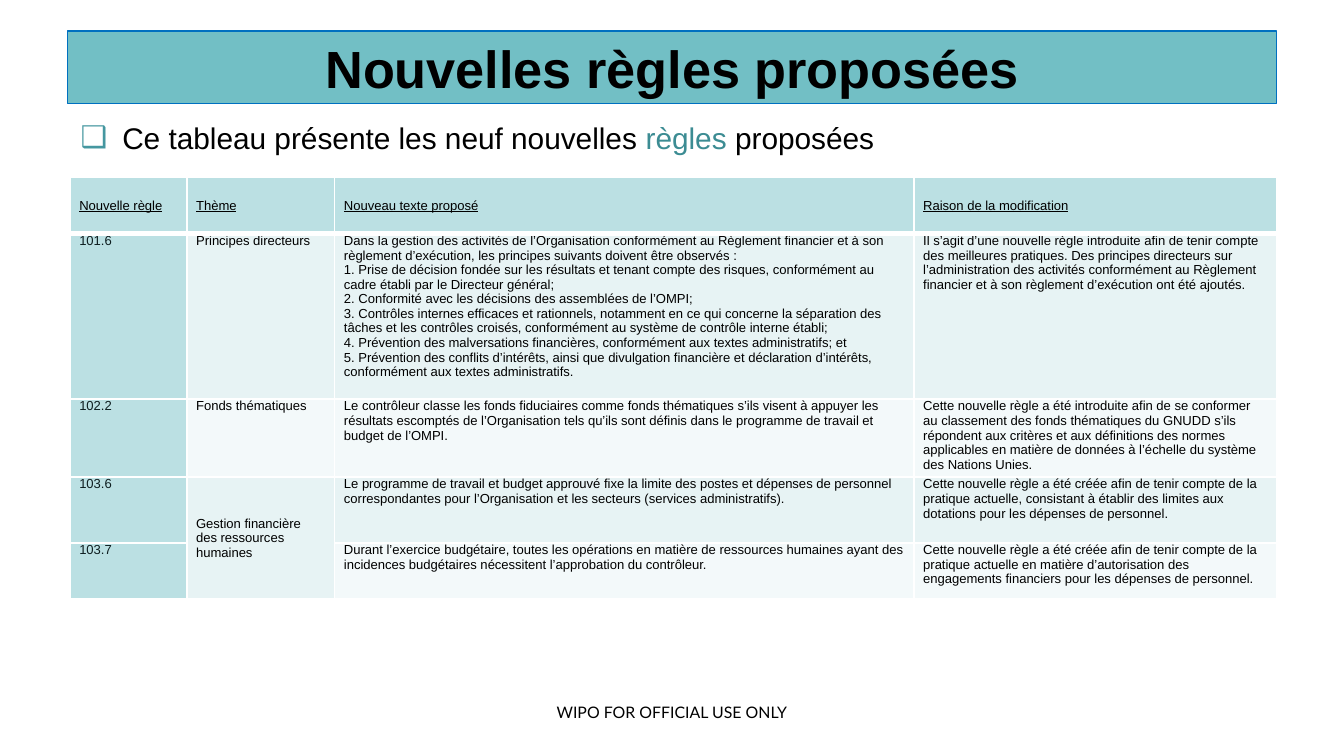
import pptx
import pptx.dml.color
import pptx.enum.text
import pptx.oxml
import pptx.oxml.ns
import pptx.util

Inches = pptx.util.Inches
Pt = pptx.util.Pt
Align = pptx.enum.text.PP_ALIGN
Anchor = pptx.enum.text.MSO_ANCHOR
AutoSize = pptx.enum.text.MSO_AUTO_SIZE

THEME = {
    "font": "Arial", "footer_font": "Lato",
    "title_size": 28, "lead_size": 16, "table_size": 7, "footer_size": 8.5,
    "text": "000000", "rule_text": "0E1E20", "accent": "3C8C93", "bullet": "4597A0",
    "title_fill": "72BFC5", "title_line": "0070C0",
    "head_fill": "BBE0E3", "bands": ("E7F3F4", "F3F9FA"), "border": "FFFFFF",
}

TITLE = "Nouvelles règles proposées"
LEAD = [
    ("Ce tableau présente les neuf nouvelles ", "text"),
    ("règles", "accent"),
    (" proposées", "text"),
]
FOOTER = "WIPO FOR OFFICIAL USE ONLY"
HEADINGS = ["Nouvelle règle", "Thème", "Nouveau texte proposé", "Raison de la modification"]
RULES = [
    ("101.6", "Principes directeurs", [
        "Dans la gestion des activités de l’Organisation conformément au Règlement financier et à son règlement d’exécution, les principes suivants doivent être observés :",
        "1. Prise de décision fondée sur les résultats et tenant compte des risques, conformément au cadre établi par le Directeur général;",
        "2. Conformité avec les décisions des assemblées de l’OMPI;",
        "3. Contrôles internes efficaces et rationnels, notamment en ce qui concerne la séparation des tâches et les contrôles croisés, conformément au système de contrôle interne établi;",
        "4. Prévention des malversations financières, conformément aux textes administratifs; et",
        "5. Prévention des conflits d’intérêts, ainsi que divulgation financière et déclaration d’intérêts, conformément aux textes administratifs.",
    ], "Il s’agit d’une nouvelle règle introduite afin de tenir compte des meilleures pratiques. Des principes directeurs sur l’administration des activités conformément au Règlement financier et à son règlement d’exécution ont été ajoutés."),
    ("102.2", "Fonds thématiques",
     "Le contrôleur classe les fonds fiduciaires comme fonds thématiques s’ils visent à appuyer les résultats escomptés de l’Organisation tels qu’ils sont définis dans le programme de travail et budget de l’OMPI.",
     "Cette nouvelle règle a été introduite afin de se conformer au classement des fonds thématiques du GNUDD s’ils répondent aux critères et aux définitions des normes applicables en matière de données à l’échelle du système des Nations Unies."),
    ("103.6", "Gestion financière des ressources humaines",
     "Le programme de travail et budget approuvé fixe la limite des postes et dépenses de personnel correspondantes pour l’Organisation et les secteurs (services administratifs).",
     "Cette nouvelle règle a été créée afin de tenir compte de la pratique actuelle, consistant à établir des limites aux dotations pour les dépenses de personnel."),
    ("103.7", None,
     "Durant l’exercice budgétaire, toutes les opérations en matière de ressources humaines ayant des incidences budgétaires nécessitent l’approbation du contrôleur.",
     "Cette nouvelle règle a été créée afin de tenir compte de la pratique actuelle en matière d’autorisation des engagements financiers pour les dépenses de personnel."),
]
COLUMN_WIDTHS = [0.87, 1.1, 4.31, 2.7]
ROW_HEIGHTS = [0.42, 1.23, 0.58, 0.49, 0.42]


def rgb(value):
    return pptx.dml.color.RGBColor.from_string(value)


def place(part, left, top, width, height):
    part.left, part.top = Inches(left), Inches(top)
    part.width, part.height = Inches(width), Inches(height)


def add_run(paragraph, text, size, color="text", font="font", bold=False, underline=False):
    run = paragraph.add_run()
    run.text = text
    run.font.name = THEME[font]
    run.font.size = Pt(THEME[size])
    run.font.color.rgb = rgb(THEME[color])
    run.font.bold = bold
    run.font.underline = underline


def add_bullet(paragraph, char, indent):
    properties = paragraph._p.get_or_add_pPr()
    properties.set("marL", str(Inches(indent)))
    properties.set("indent", str(-Inches(indent)))
    ns = pptx.oxml.ns.nsdecls("a")
    properties.append(pptx.oxml.parse_xml(
        f'<a:buClr {ns}><a:srgbClr val="{THEME["bullet"]}"/></a:buClr>'))
    properties.append(pptx.oxml.parse_xml(f'<a:buChar {ns} char="{char}"/>'))


def add_borders(cell, bottom):
    ns = pptx.oxml.ns.nsdecls("a")
    for side, width in (("lnL", 1), ("lnR", 1), ("lnT", 1), ("lnB", bottom)):
        cell._tc.get_or_add_tcPr().append(pptx.oxml.parse_xml(
            f'<a:{side} {ns} w="{Pt(width)}"><a:solidFill><a:srgbClr val="{THEME["border"]}"/>'
            f'</a:solidFill></a:{side}>'))


def fill_cell(cell, content, fill, color="text", heading=False):
    add_borders(cell, 3 if heading else 1)
    cell.fill.solid()
    cell.fill.fore_color.rgb = rgb(fill)
    cell.margin_left = cell.margin_right = Inches(0.07)
    cell.margin_top = cell.margin_bottom = 0
    cell.vertical_anchor = Anchor.MIDDLE if heading else Anchor.TOP
    if content is None:
        return
    lines = [content] if isinstance(content, str) else content
    for index, line in enumerate(lines):
        paragraph = cell.text_frame.add_paragraph() if index else cell.text_frame.paragraphs[0]
        add_run(paragraph, line, "table_size", color, underline=heading)


def add_title(slide):
    title = slide.shapes.title
    place(title, 0.5, 0.23, 9, 0.54)
    title.fill.solid()
    title.fill.fore_color.rgb = rgb(THEME["title_fill"])
    title.line.color.rgb = rgb(THEME["title_line"])
    title.line.width = Pt(0.75)
    title.text_frame.auto_size = AutoSize.NONE
    title.text_frame.vertical_anchor = Anchor.MIDDLE
    paragraph = title.text_frame.paragraphs[0]
    paragraph.alignment = Align.CENTER
    add_run(paragraph, TITLE, "title_size", bold=True)


def add_lead(slide):
    lead = slide.placeholders[1]
    place(lead, 0.5, 0.84, 8.83, 0.37)
    lead.text_frame.auto_size = AutoSize.NONE
    paragraph = lead.text_frame.paragraphs[0]
    add_bullet(paragraph, "❑", 0.31)
    paragraph.space_before = Pt(0)
    for text, color in LEAD:
        add_run(paragraph, text, "lead_size", color)


def add_rules_table(slide):
    rules = slide.shapes.add_table(
        len(ROW_HEIGHTS), len(COLUMN_WIDTHS), Inches(0.52), Inches(1.32),
        Inches(sum(COLUMN_WIDTHS)), Inches(sum(ROW_HEIGHTS))).table
    rules.first_row = rules.horz_banding = False
    for column, width in zip(rules.columns, COLUMN_WIDTHS):
        column.width = Inches(width)
    for row, height in zip(rules.rows, ROW_HEIGHTS):
        row.height = Inches(height)
    for col, heading in enumerate(HEADINGS):
        fill_cell(rules.cell(0, col), heading, THEME["head_fill"], heading=True)
    for row, rule in enumerate(RULES, start=1):
        band = THEME["bands"][(row - 1) % 2]
        for col, content in enumerate(rule):
            if col == 0:
                fill_cell(rules.cell(row, col), content, THEME["head_fill"], "rule_text")
            else:
                fill_cell(rules.cell(row, col), content, band)
    shared_theme = rules.cell(3, 1)
    shared_theme.merge(rules.cell(4, 1))
    shared_theme.vertical_anchor = Anchor.MIDDLE


def add_footer(slide):
    footer = slide.shapes.add_textbox(0, Inches(5.2), Inches(10), Inches(0.2)).text_frame
    footer.word_wrap = True
    footer.margin_top = footer.margin_bottom = 0
    footer.vertical_anchor = Anchor.MIDDLE
    footer.paragraphs[0].alignment = Align.CENTER
    add_run(footer.paragraphs[0], FOOTER, "footer_size", font="footer_font")


def main():
    deck = pptx.Presentation()
    deck.slide_width = Inches(10)
    deck.slide_height = deck.slide_width * 9 // 16
    slide = deck.slides.add_slide(deck.slide_layouts[1])
    add_title(slide)
    add_lead(slide)
    add_rules_table(slide)
    add_footer(slide)
    deck.save("out.pptx")


if __name__ == "__main__":
    main()
